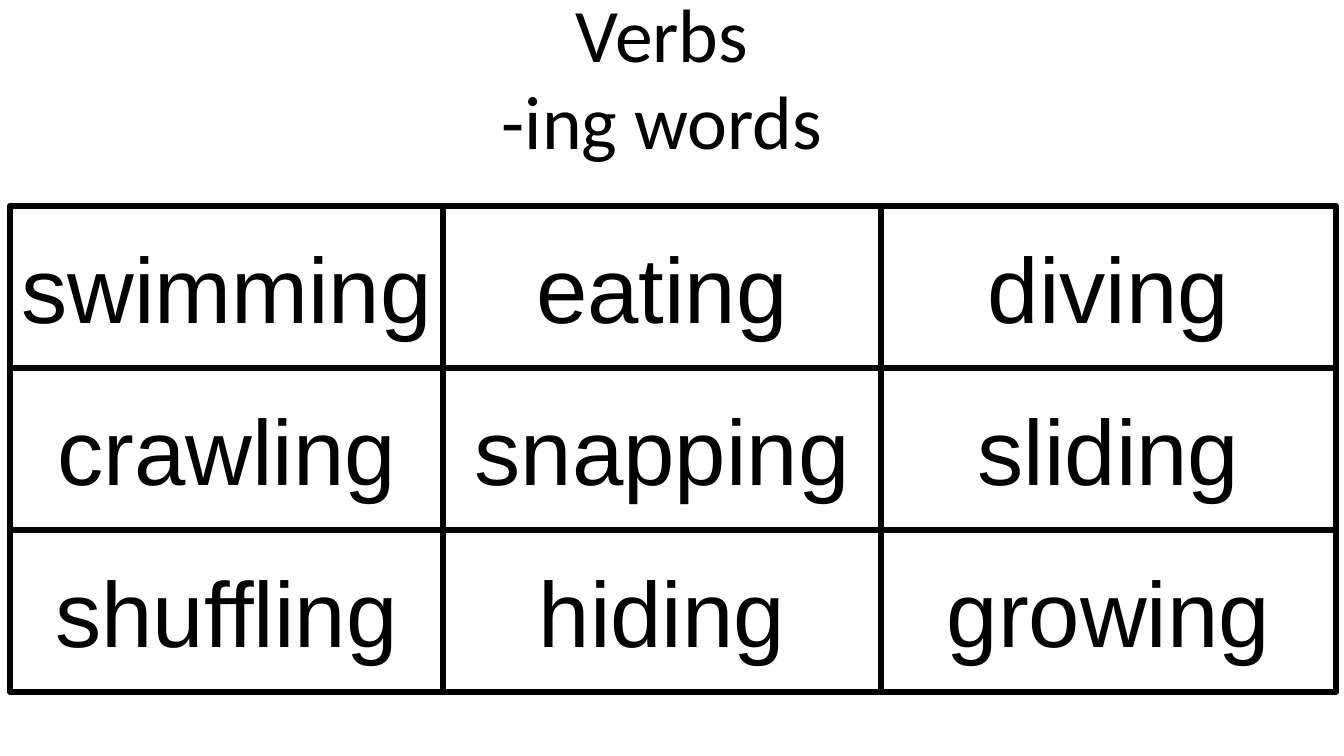
from pptx import Presentation
from pptx.dml.color import RGBColor
from pptx.enum.shapes import MSO_SHAPE
from pptx.enum.text import MSO_ANCHOR, PP_ALIGN
from pptx.util import Pt

EMU_PER_PX = 914400 / 100.8
BLACK = "000000"
WHITE = "FFFFFF"
TITLE_LINES = ["Verbs", "-ing words"]
VERB_ROWS = [
    ["swimming", "eating", "diving"],
    ["crawling", "snapping", "sliding"],
    ["shuffling", "hiding", "growing"],
]
COLUMN_EDGES = [10, 443, 881, 1336]
GRID_TOP = 206
ROW_HEIGHT = 162


def px(length):
    return round(length * EMU_PER_PX)


def color(hex_string):
    return RGBColor.from_string(hex_string)


def format_paragraph(paragraph, font_name, size):
    paragraph.alignment = PP_ALIGN.CENTER
    for run in paragraph.runs:
        run.font.name = font_name
        run.font.size = Pt(size)
        run.font.color.rgb = color(BLACK)


def add_title(slide, left, top, width, height):
    title = slide.shapes.add_textbox(px(left), px(top), px(width), px(height))
    title.text_frame.word_wrap = True
    title.text_frame.text = "\n".join(TITLE_LINES)
    for index, paragraph in enumerate(title.text_frame.paragraphs):
        paragraph.line_spacing = 0.8
        paragraph.space_before = Pt(10 if index else 0)
        format_paragraph(paragraph, "Calibri", 54)


def add_verb_card(slide, verb, left, top, width, height):
    card = slide.shapes.add_shape(
        MSO_SHAPE.RECTANGLE, px(left), px(top), px(width), px(height)
    )
    card.shadow.inherit = False
    card.fill.solid()
    card.fill.fore_color.rgb = color(WHITE)
    card.line.color.rgb = color(BLACK)
    card.line.width = Pt(4.5)
    card.text_frame.word_wrap = False
    card.text_frame.vertical_anchor = MSO_ANCHOR.MIDDLE
    card.text_frame.text = verb
    format_paragraph(card.text_frame.paragraphs[0], "Arial", 66)


def add_verb_grid(slide):
    for row, verbs in enumerate(VERB_ROWS):
        top = GRID_TOP + row * ROW_HEIGHT
        for verb, left, right in zip(verbs, COLUMN_EDGES, COLUMN_EDGES[1:]):
            add_verb_card(slide, verb, left, top, right - left, ROW_HEIGHT)


def main():
    presentation = Presentation()
    presentation.slide_width = px(1344)
    presentation.slide_height = px(756)
    slide = presentation.slides.add_slide(presentation.slide_layouts[6])
    add_title(slide, 158, 0, 1008, 182)
    add_verb_grid(slide)
    presentation.save("out.pptx")


if __name__ == "__main__":
    main()
